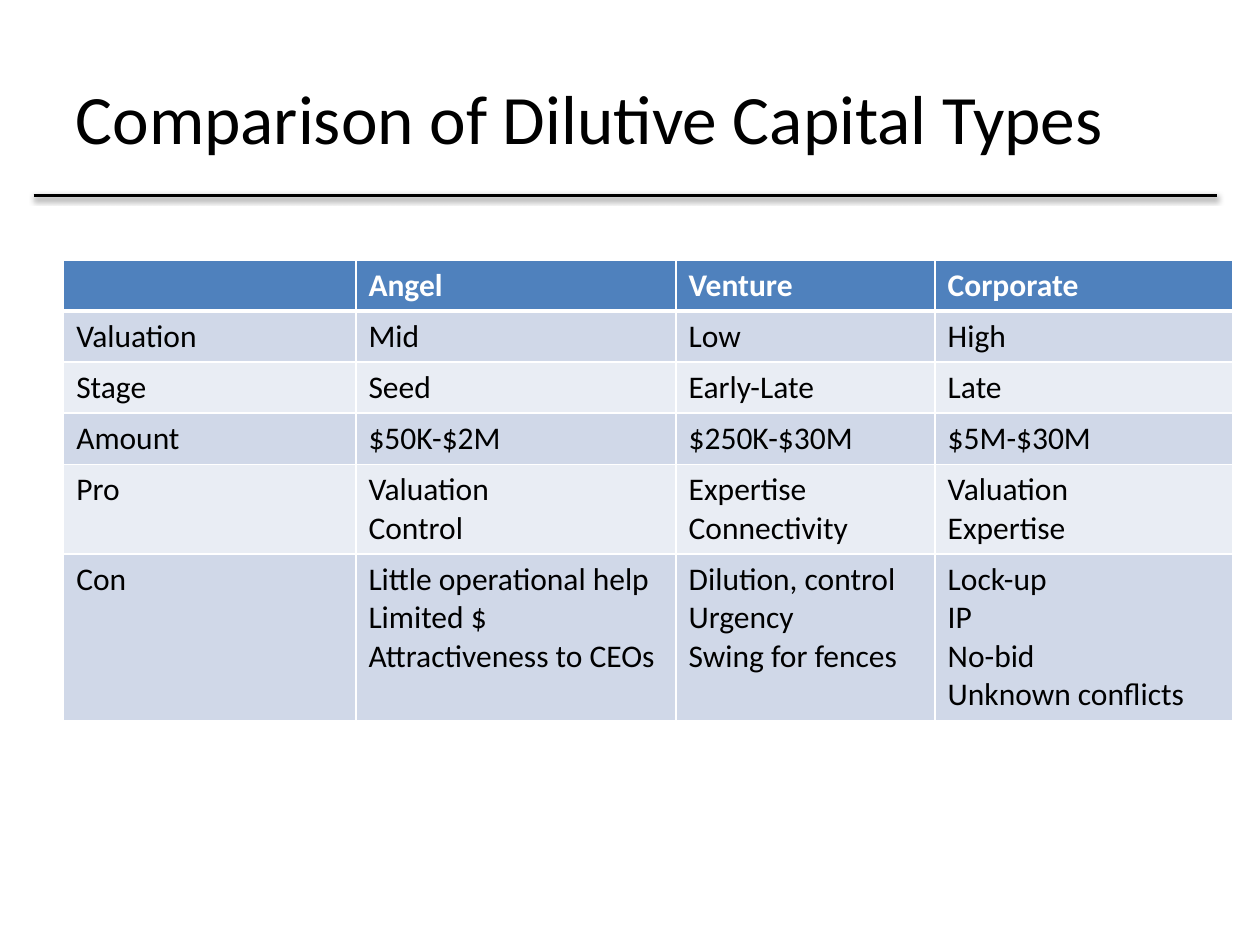
import pptx
import pptx.dml.color
import pptx.enum.shapes
import pptx.enum.text
import pptx.oxml
import pptx.oxml.ns
import pptx.util
import lxml.etree

Pt = pptx.util.Pt
FONT = "Calibri"
BLACK, WHITE = "000000", "FFFFFF"
HEADER_FILL = "4F81BD"
BAND_FILLS = ["D0D8E8", "E9EDF4"]
COLUMN_WIDTHS = [167, 183, 148, 170]
LINE_HEIGHT, CELL_PADDING = 22, 7.2
ROWS = [
    ["", "Angel", "Venture", "Corporate"],
    ["Valuation", "Mid", "Low", "High"],
    ["Stage", "Seed", "Early-Late", "Late"],
    ["Amount", "$50K-$2M", "$250K-$30M", "$5M-$30M"],
    ["Pro", "Valuation\nControl", "Expertise\nConnectivity", "Valuation\nExpertise"],
    [
        "Con",
        "Little operational help\nLimited $\nAttractiveness to CEOs",
        "Dilution, control\nUrgency\nSwing for fences",
        "Lock-up\nIP\nNo-bid\nUnknown conflicts",
    ],
]


def color(hex_value):
    """Return the colour for a hex string."""
    return pptx.dml.color.RGBColor.from_string(hex_value)


def apply_format(target, values):
    """Set each attribute named in a dict of format values."""
    for name, value in values.items():
        setattr(target, name, value)


def format_text(frame, size, hex_value, bold=False):
    """Give every paragraph of a text frame the same font."""
    for para in frame.paragraphs:
        apply_format(para.font, {"name": FONT, "size": Pt(size), "bold": bold})
        para.font.color.rgb = color(hex_value)


def add_child(parent, tag, **attributes):
    """Append a drawing element with the given attributes."""
    child = lxml.etree.SubElement(parent, pptx.oxml.ns.qn(tag))
    for name, value in attributes.items():
        child.set(name, str(value))
    return child


def place_title(page, left, top, width, height):
    """Place the slide title in its box."""
    title = page.shapes.title
    box = {"left": left, "top": top, "width": width, "height": height}
    apply_format(title, {name: Pt(value) for name, value in box.items()})
    frame = title.text_frame
    frame.text = "Comparison of Dilutive Capital Types"
    apply_format(frame, {
        "word_wrap": True,
        "vertical_anchor": pptx.enum.text.MSO_ANCHOR.MIDDLE,
    })
    frame.paragraphs[0].alignment = pptx.enum.text.PP_ALIGN.LEFT
    format_text(frame, 39.6, BLACK)


def place_rule(page, left, top, width):
    """Draw the shadowed line below the title."""
    rule = page.shapes.add_connector(
        pptx.enum.shapes.MSO_CONNECTOR.STRAIGHT,
        Pt(left), Pt(top), Pt(left + width), Pt(top),
    )
    rule.line.width = Pt(2)
    rule.line.color.rgb = color(BLACK)
    effects = add_child(rule._element.spPr, "a:effectLst")
    shadow = add_child(
        effects, "a:outerShdw", blurRad=Pt(3.1), dist=Pt(1.6),
        dir=90 * 60000, rotWithShape=0,
    )
    shade = add_child(shadow, "a:srgbClr", val=BLACK)
    add_child(shade, "a:alpha", val=38000)


def add_borders(cell, top_width, bottom_width):
    """Draw white borders around a table cell."""
    properties = cell._tc.get_or_add_tcPr()
    widths = {"L": 1, "R": 1, "T": top_width, "B": bottom_width}
    for side, width in widths.items():
        border = add_child(properties, f"a:ln{side}", w=Pt(width))
        fill = add_child(border, "a:solidFill")
        add_child(fill, "a:srgbClr", val=WHITE)


def place_table(page, left, top):
    """Build the comparison table from its top left corner."""
    heights = [
        CELL_PADDING + LINE_HEIGHT * max(text.count("\n") + 1 for text in row)
        for row in ROWS
    ]
    table = page.shapes.add_table(
        len(ROWS), len(COLUMN_WIDTHS), Pt(left), Pt(top),
        Pt(sum(COLUMN_WIDTHS)), Pt(sum(heights)),
    ).table
    for column, width in zip(table.columns, COLUMN_WIDTHS):
        column.width = Pt(width)
    for index, (texts, height) in enumerate(zip(ROWS, heights)):
        table.rows[index].height = Pt(height)
        header = index == 0
        fill = HEADER_FILL if header else BAND_FILLS[(index - 1) % 2]
        for cell, text in zip(table.rows[index].cells, texts):
            cell.text = text
            format_text(cell.text_frame, 18, WHITE if header else BLACK, header)
            add_borders(cell, 3 if index == 1 else 1, 3 if header else 1)
            cell.fill.solid()
            cell.fill.fore_color.rgb = color(fill)


def main():
    """Build and save the deck."""
    deck = pptx.Presentation()
    apply_format(deck, {"slide_width": Pt(720), "slide_height": Pt(540)})
    page = deck.slides.add_slide(deck.slide_layouts[5])
    place_title(page, 36, 21.6, 648, 90)
    place_rule(page, 19.2, 111.6, 676.4)
    place_table(page, 36.4, 148.5)
    deck.save("out.pptx")


if __name__ == "__main__":
    main()
